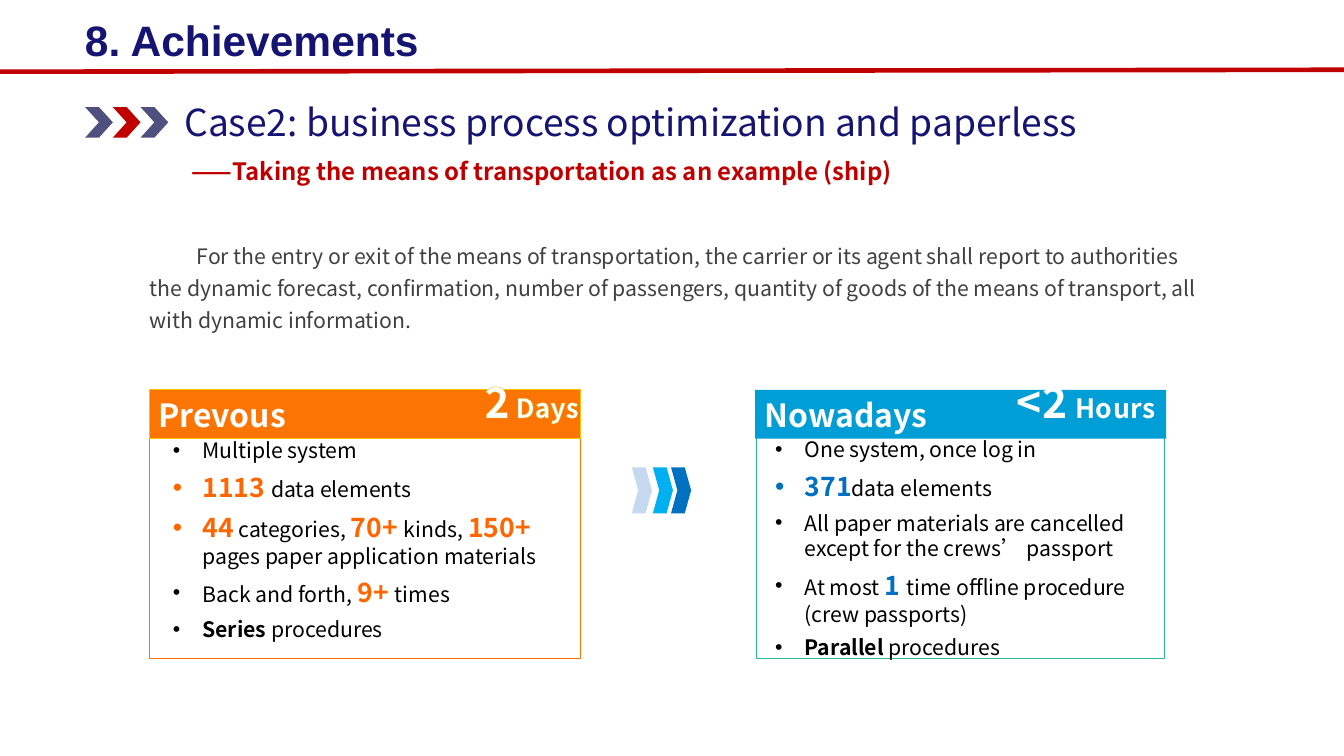
from lxml.etree import SubElement as Sub
from pptx import Presentation
from pptx.dml.color import RGBColor
from pptx.enum.shapes import MSO_CONNECTOR as Conn, MSO_SHAPE as Kind
from pptx.enum.text import MSO_ANCHOR as Anchor, MSO_AUTO_SIZE as Fit
from pptx.oxml.ns import qn
from pptx.util import Inches, Pt

NAVY, RED, SLATE, WHITE = "151472", "C00000", "50507F", "FFFFFF"
NOTO = "Noto Sans CJK SC"


def tint(code):
    return RGBColor.from_string(code)


class Board:
    """Holds the text style and the current slide."""
    base = {"name": NOTO, "size": 16, "bold": False, "color": "000000"}

    def __init__(self, slide):
        self.slide = slide

    def run(self, para, words, edge=None, gap=0, **look):
        run = para.add_run()
        run.text = words
        look = {**self.base, **look}
        run.font.color.rgb = tint(look.pop("color"))
        look["size"] = Pt(look["size"])
        for key, val in look.items():
            setattr(run.font, key, val)
        props = run.font._element
        Sub(props, qn("a:ea"), typeface=look["name"])
        if gap:
            props.set("spc", str(int(gap * 100)))
        if edge:
            code, width = edge
            line = Sub(props, qn("a:ln"), w=str(Pt(width)))
            fill = Sub(line, qn("a:solidFill"))
            Sub(fill, qn("a:srgbClr"), val=code)
            props.insert(0, line)

    def text(self, at, runs, wrap=True, anchor=Anchor.TOP, lead=None, indent=0):
        frame = self.slide.shapes.add_textbox(*map(Inches, at)).text_frame
        frame.word_wrap = wrap
        frame.vertical_anchor = anchor
        if not wrap:
            frame.auto_size = Fit.SHAPE_TO_FIT_TEXT
        para = frame.paragraphs[0]
        if lead:
            para.line_spacing = lead
        if indent:
            para._p.get_or_add_pPr().set("indent", str(Inches(indent)))
        for words, look in runs:
            self.run(para, words, **look)

    def bullets(self, at, items):
        frame = self.slide.shapes.add_textbox(*map(Inches, at)).text_frame
        frame.word_wrap = True
        for num, runs in enumerate(items):
            para = frame.add_paragraph() if num else frame.paragraphs[0]
            para.space_after = Pt(6)
            props = para._p.get_or_add_pPr()
            props.set("marL", str(Inches(0.31)))
            props.set("indent", str(-Inches(0.31)))
            Sub(props, qn("a:buFont"), typeface="Arial")
            Sub(props, qn("a:buChar"), char="•")
            for words, look in runs:
                self.run(para, words, **look)

    def shape(self, kind, at, fill=None, line=None, bend=None):
        shape = self.slide.shapes.add_shape(kind, *map(Inches, at))
        shape.shadow.inherit = False
        if bend:
            shape.adjustments[0] = bend
        if fill:
            shape.fill.solid()
            shape.fill.fore_color.rgb = tint(fill)
        else:
            shape.fill.background()
        if line:
            shape.line.color.rgb = tint(line)
            shape.line.width = Pt(0.75)
        else:
            shape.line.fill.background()
        return shape

    def rule(self, ends, color, width):
        line = self.slide.shapes.add_connector(Conn.STRAIGHT, *map(Inches, ends))
        line.line.color.rgb = tint(color)
        line.line.width = Pt(width)
        Sub(line._element.spPr, qn("a:effectLst"))

    def panel(self, frame, head, name, fill, edge, rim):
        self.shape(Kind.RECTANGLE, frame, line=edge)
        bar = self.shape(Kind.RECTANGLE, head, fill, rim)
        bar.text_frame.vertical_anchor = Anchor.MIDDLE
        para = bar.text_frame.paragraphs[0]
        para.alignment = 1
        self.run(para, name, size=24, bold=True, color=WHITE)


def main():
    deck = Presentation()
    deck.slide_width, deck.slide_height = Inches(14.06), Inches(7.91)
    board = Board(deck.slides.add_slide(deck.slide_layouts[6]))

    # Title and rule
    board.text((0.79, 0.1, 5.77, 0.56), [("8. Achievements", {
        "name": "Arial", "size": 32, "bold": True, "color": NAVY})])
    board.rule((0, 0.75, 14.08, 0.73), RED, 3.5)

    # Case heading
    for num, color in enumerate((SLATE, RED, SLATE)):
        board.shape(Kind.CHEVRON, (0.89 + num * 0.29, 1.12, 0.29, 0.32), color)
    board.text((1.83, 0.99, 11.08, 0.57), [
        ("Case2: business process optimization and paperless",
         {"size": 28, "color": NAVY})])
    board.text((1.91, 1.53, 8.83, 0.49), [
        ("——Taking the means of transportation as an example (ship)",
         {"size": 18, "bold": True, "color": RED})],
        anchor=Anchor.MIDDLE, lead=1.1)

    # Introduction
    board.text((1.47, 2.43, 11.24, 1.11), [
        ("For the entry or exit of the means of transportation, the carrier "
         "or its agent shall report to authorities the dynamic forecast, "
         "confirmation, number of passengers, quantity of goods of the means "
         "of transport, all with dynamic information.", {"color": "404040"})],
        lead=1.25, indent=0.49)

    # Arrows between the panels
    for left, color in ((6.61, "C6D9F1"), (6.83, "00B0F0"), (7.02, "0070C0")):
        board.shape(Kind.CHEVRON, (left, 4.89, 0.21, 0.48), color, bend=0.316)

    plain, bold = {}, {"bold": True}
    warm = {"size": 20, "bold": True, "color": "FF6600"}
    cool = {**warm, "color": "0070C0"}

    # Previous process
    board.panel((1.56, 4.47, 4.51, 2.42), (1.56, 4.08, 4.51, 0.51),
                "Prevous", "FC7404", "FC7404", "FFC000")
    board.bullets((1.71, 4.53, 4.4, 2.59), [
        [("Multiple system", plain)],
        [("1113 ", warm), ("data elements", plain)],
        [("44", warm), (" categories, ", plain), ("70+ ", warm),
         ("kinds, ", plain), ("150+ ", warm),
         ("pages paper application materials", plain)],
        [("Back and forth, ", plain), ("9+ ", warm), ("times", plain)],
        [("Series", bold), (" procedures", plain)]])
    days = {"bold": True, "color": WHITE, "edge": ("C6C724", 0.52)}
    board.text((4.97, 3.88, 1.45, 0.64), [
        ("2", {**days, "size": 32}), (" Days", {**days, "size": 20})], wrap=False)

    # Current process
    board.panel((7.91, 4.47, 4.27, 2.42), (7.9, 4.08, 4.3, 0.51),
                "Nowadays", "009ED6", "2BB79C", None)
    board.bullets((8.01, 4.52, 4.17, 2.73), [
        [("One system, once log in", plain)],
        [("371", cool), ("data elements", plain)],
        [("All paper materials are cancelled except for the crews’ passport",
          plain)],
        [("At most ", plain), ("1 ", cool),
         ("time offline procedure (crew passports)", plain)],
        [("Parallel", bold), (" procedures", plain)]])
    hours = {"bold": True, "color": "FEFEFE", "edge": ("00B0F0", 0.75), "gap": 0.5}
    board.text((10.54, 3.89, 2.01, 0.64), [
        ("<2", {**hours, "size": 32}), (" Hours", {**hours, "size": 20})], wrap=False)

    deck.save("out.pptx")


if __name__ == "__main__":
    main()
